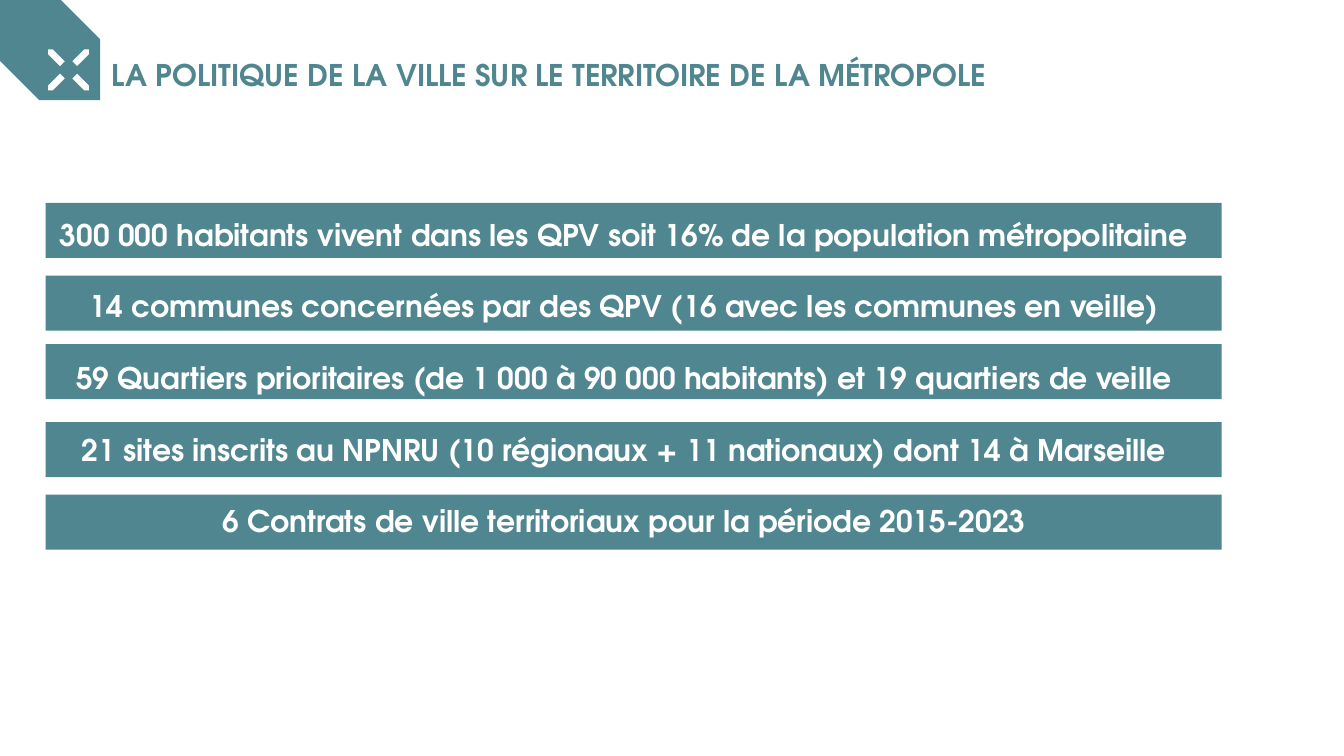
from dataclasses import dataclass
from math import cos, radians, sin

from lxml.etree import SubElement
from pptx import Presentation
from pptx.dml.color import RGBColor
from pptx.enum.shapes import MSO_SHAPE
from pptx.enum.text import MSO_ANCHOR, MSO_AUTO_SIZE, PP_ALIGN
from pptx.oxml.ns import qn
from pptx.util import Inches, Pt


@dataclass(frozen=True)
class Theme:
    teal: RGBColor = RGBColor(0x4F, 0x86, 0x8F)
    white: RGBColor = RGBColor(0xFF, 0xFF, 0xFF)
    font: str = "TeX Gyre Adventor"
    size: float = 16
    fact_gap: float = 19.2


THEME = Theme()
TITLE = "LA POLITIQUE DE LA VILLE SUR LE TERRITOIRE DE LA MÉTROPOLE"
FACTS = [
    "300 000 habitants vivent dans les QPV soit 16% de la population métropolitaine",
    "14 communes concernées par des QPV (16 avec les communes en veille)",
    "59 Quartiers prioritaires (de 1 000 à 90 000 habitants) et 19 quartiers de veille",
    "21 sites inscrits au NPNRU (10 régionaux + 11 nationaux) dont 14 à Marseille",
    "6 Contrats de ville territoriaux pour la période 2015-2023",
]
BAR_OFFSETS = [0, 0.54, 1.05, 1.63, 2.17]
BAR_HEIGHT = 0.41


def add_filled(page, kind, left, top, width, height, color, rotation=0):
    shape = page.shapes.add_shape(
        kind, Inches(left), Inches(top), Inches(width), Inches(height))
    shape.shadow.inherit = False
    shape.fill.solid()
    shape.fill.fore_color.rgb = color
    shape.line.fill.background()
    shape.rotation = rotation
    return shape


def place(box, left, top, width, height):
    box.left, box.top = Inches(left), Inches(top)
    box.width, box.height = Inches(width), Inches(height)
    frame = box.text_frame
    frame.word_wrap = True
    frame.auto_size = MSO_AUTO_SIZE.NONE
    frame.vertical_anchor = MSO_ANCHOR.TOP
    return frame


def write(para, text, color, align=PP_ALIGN.LEFT, space_before=0):
    para.alignment = align
    para.space_before = Pt(space_before)
    span = para.add_run()
    span.text = text
    span.font.name = THEME.font
    span.font.size = Pt(THEME.size)
    span.font.bold = True
    span.font.color.rgb = color


def remove_bullet(para):
    properties = para._p.get_or_add_pPr()
    properties.set("marL", "0")
    properties.set("indent", "0")
    SubElement(properties, qn("a:buNone"))


def add_corner_mark(page, left, top, width, height):
    """Tilted tab with four small white arrows pointing outwards."""
    add_filled(page, MSO_SHAPE.PENTAGON, left, top, width, height, THEME.teal, 45)
    center_x, center_y = left + 0.67, top + 0.47
    arrow_width, arrow_height, reach = 0.15, 0.05, 0.14
    for angle in (315, 45, 135, 225):
        x = center_x + reach * cos(radians(angle))
        y = center_y + reach * sin(radians(angle))
        add_filled(page, MSO_SHAPE.PENTAGON, x - arrow_width / 2,
                   y - arrow_height / 2, arrow_width, arrow_height,
                   THEME.white, angle)


def add_title(page, left, top, width, height):
    frame = place(page.shapes.title, left, top, width, height)
    write(frame.paragraphs[0], TITLE, THEME.teal)


def add_facts(page, left, top, width):
    """Stack of bars with the list of facts laid over them."""
    for offset in BAR_OFFSETS:
        add_filled(page, MSO_SHAPE.RECTANGLE, left, top + offset, width,
                   BAR_HEIGHT, THEME.teal)

    body = page.placeholders[1]
    frame = place(body, left - 0.07, top + 0.05, width, 3.06)
    for index, fact in enumerate(FACTS):
        para = frame.paragraphs[0] if index == 0 else frame.add_paragraph()
        write(para, fact, THEME.white, align=PP_ALIGN.CENTER,
              space_before=THEME.fact_gap if index else 0)
        remove_bullet(para)
    # Placeholders start at the back; the list belongs in front of its bars.
    body.element.getparent().append(body.element)


def main():
    deck = Presentation()
    deck.slide_width = Inches(10)
    deck.slide_height = deck.slide_width * 9 // 16
    page = deck.slides.add_slide(deck.slide_layouts[1])
    add_corner_mark(page, -0.16, 0.05, 1.06, 0.64)
    add_title(page, 0.73, 0.37, 7.16, 0.24)
    add_facts(page, 0.34, 1.51, 8.75)
    deck.save("out.pptx")


if __name__ == "__main__":
    main()
